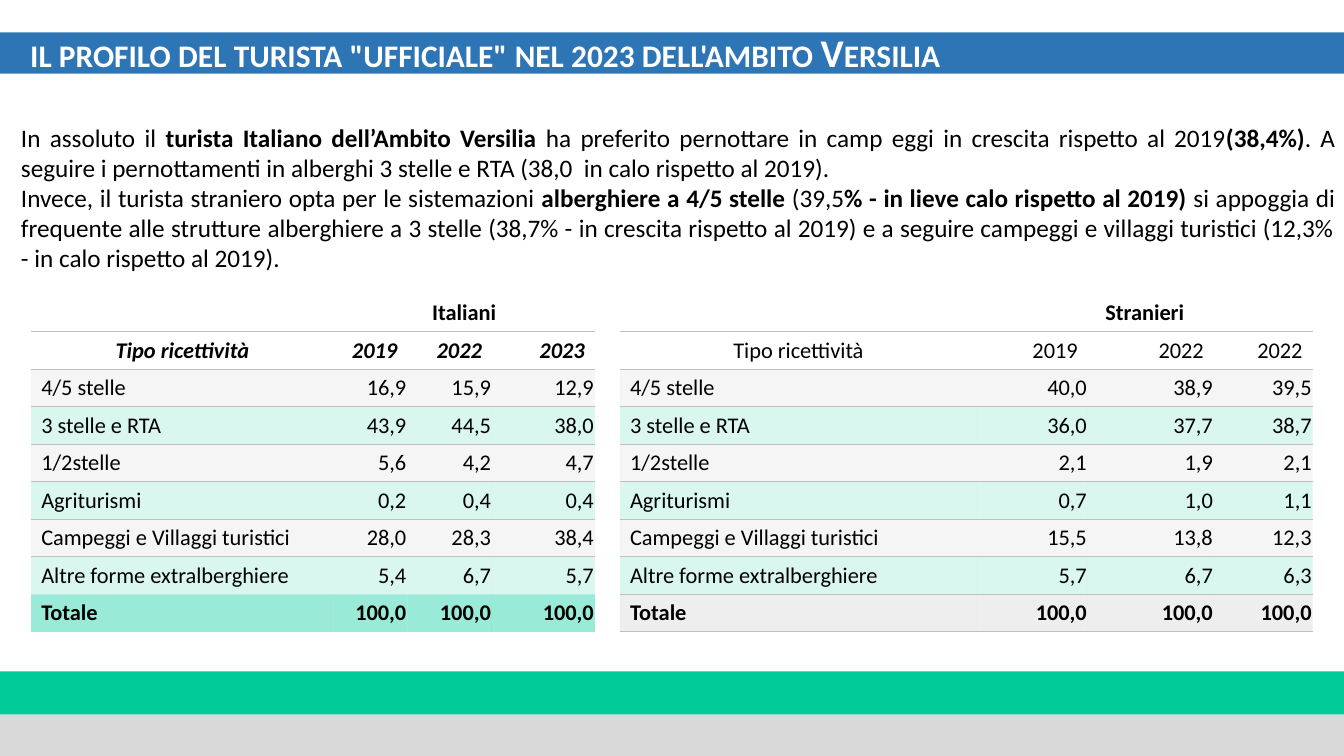
from lxml import etree
from pptx import Presentation
from pptx.dml.color import RGBColor
from pptx.enum.shapes import MSO_SHAPE
from pptx.enum.text import MSO_ANCHOR, MSO_AUTO_SIZE, PP_ALIGN
from pptx.oxml.ns import qn
from pptx.util import Inches, Pt

RECTANGLE = MSO_SHAPE.RECTANGLE
MIDDLE = MSO_ANCHOR.MIDDLE
NO_FIT = MSO_AUTO_SIZE.NONE
LEFT, CENTER, RIGHT, JUSTIFY = PP_ALIGN.LEFT, PP_ALIGN.CENTER, PP_ALIGN.RIGHT, PP_ALIGN.JUSTIFY

GREEN, GRAY, RULE_GRAY = "00CC99", "D9D9D9", "BFBFBF"


def color(hex_value):
    return RGBColor.from_string(hex_value)


def style_run(run, size, hex_value, bold=False, italic=False):
    run.font.name = "Calibri"
    run.font.size = Pt(size)
    run.font.bold = bold
    run.font.italic = italic
    run.font.color.rgb = color(hex_value)


prs = Presentation()
prs.slide_width = Inches(13.33)
prs.slide_height = Inches(7.5)
slide = prs.slides.add_slide(prs.slide_layouts[5])

for top, height, fill in [(6.66, 0.43, GREEN), (7.09, 0.41, GRAY), (0.32, 0.41, "2E75B6")]:
    band = slide.shapes.add_shape(RECTANGLE, 0, Inches(top), prs.slide_width, Inches(height))
    band.shadow.inherit = False
    band.fill.solid()
    band.fill.fore_color.rgb = color(fill)
    band.line.fill.background()

title = slide.shapes.title
title.element.getparent().append(title.element)
title.left, title.top = Inches(0.2), Inches(0.29)
title.width, title.height = Inches(10.53), Inches(0.44)
title.text_frame.text = "il profilo del turista \"ufficiale\" nel 2023 dell'ambito Versilia"
title.text_frame.auto_size = NO_FIT
title.text_frame.vertical_anchor = MIDDLE
heading = title.text_frame.paragraphs[0]
heading.alignment = LEFT
style_run(heading.runs[0], 28, "FFFFFF", bold=True)
heading.runs[0].font._element.set("cap", "small")

rows = [
    ["", "Italiani", "", "", "", "", "Stranieri", "", ""],
    ["Tipo ricettività", "2019", "2022", "2023", "", "Tipo ricettività", "2019", "2022", "2022"],
    ["4/5 stelle", "16,9", "15,9", "12,9", "", "4/5 stelle", "40,0", "38,9", "39,5"],
    ["3 stelle e RTA", "43,9", "44,5", "38,0", "", "3 stelle e RTA", "36,0", "37,7", "38,7"],
    ["1/2stelle", "5,6", "4,2", "4,7", "", "1/2stelle", "2,1", "1,9", "2,1"],
    ["Agriturismi", "0,2", "0,4", "0,4", "", "Agriturismi", "0,7", "1,0", "1,1"],
    ["Campeggi e Villaggi turistici", "28,0", "28,3", "38,4", "",
     "Campeggi e Villaggi turistici", "15,5", "13,8", "12,3"],
    ["Altre forme extralberghiere", "5,4", "6,7", "5,7", "",
     "Altre forme extralberghiere", "5,7", "6,7", "6,3"],
    ["Totale", "100,0", "100,0", "100,0", "", "Totale", "100,0", "100,0", "100,0"],
]
widths = [3, 0.73, 0.84, 1.02, 0.25, 3.54, 1.1, 1.25, 0.98]
GAP, LABELS = 4, (0, 5)
TOTAL = len(rows) - 1

overnight_stays = slide.shapes.add_table(
    len(rows), len(widths), Inches(0.31), Inches(2.92), Inches(12.71), Inches(2.9)).table
overnight_stays.first_row = False
overnight_stays.horz_banding = False
for column, width in zip(overnight_stays.columns, widths):
    column.width = Inches(width)
for first in (1, 6):
    overnight_stays.cell(0, first).merge(overnight_stays.cell(0, first + 2))

for r, row in enumerate(rows):
    overnight_stays.rows[r].height = Inches(0.32)
    for c, value in enumerate(row):
        cell = overnight_stays.cell(r, c)
        cell.vertical_anchor = MIDDLE
        italian = c < GAP
        ruled_top = c != GAP and r > 0 and not (italian and r == TOTAL)
        ruled_bottom = c != GAP and not (italian and r >= TOTAL - 1)

        properties = cell._tc.get_or_add_tcPr()
        for side, ruled in [("L", False), ("R", False), ("T", ruled_top), ("B", ruled_bottom)]:
            border = etree.SubElement(properties, qn(f"a:ln{side}"), w=str(Pt(0.96)))
            if ruled:
                paint = etree.SubElement(border, qn("a:solidFill"))
                etree.SubElement(paint, qn("a:srgbClr"), val=RULE_GRAY)
            else:
                etree.SubElement(border, qn("a:noFill"))

        if c == GAP or r < 2:
            cell.fill.background()
        else:
            if r == TOTAL:
                fill, opacity = (GREEN, 40) if italian else (RULE_GRAY, 25)
            else:
                fill, opacity = (GRAY, 25) if r % 2 == 0 else (GREEN, 15)
            cell.fill.solid()
            cell.fill.fore_color.rgb = color(fill)
            tint = properties.find(qn("a:solidFill")).find(qn("a:srgbClr"))
            etree.SubElement(tint, qn("a:alpha"), val=str(opacity * 1000))

        paragraph = cell.text_frame.paragraphs[0]
        if not value:
            etree.SubElement(paragraph._p, qn("a:endParaRPr"), sz="1600")
            continue
        paragraph.text = value
        if r == 0 or (r == 1 and c in LABELS):
            paragraph.alignment = CENTER
        else:
            paragraph.alignment = LEFT if c in LABELS else RIGHT
        if r > 1 and c not in LABELS:
            cell.margin_left = cell.margin_right = Inches(0.01)
        style_run(paragraph.runs[0], 16, "000000",
                  bold=r in (0, TOTAL) or (r == 1 and italian), italic=r == 1 and italian)

commentary = [
    [("In assoluto il ", False),
     ("turista Italiano dell’Ambito Versilia ", True),
     ("ha preferito pernottare in camp eggi in crescita rispetto al 2019", False),
     ("(38,4%)", True),
     (". A seguire i pernottamenti in alberghi 3 stelle e RTA (38,0  in calo rispetto al 2019).", False)],
    [("Invece, il turista straniero opta per le sistemazioni ", False),
     ("alberghiere a 4/5 stelle", True),
     (" (39,5", False),
     ("% - in lieve calo rispetto al 2019)", True),
     (" si appoggia di frequente alle strutture alberghiere a 3 stelle (38,7% - in crescita rispetto "
      "al 2019) e a seguire campeggi e villaggi turistici (12,3% - in calo rispetto al 2019).", False)],
]
comment_frame = slide.shapes.add_textbox(
    Inches(0.11), Inches(1.16), Inches(13.23), Inches(1.6)).text_frame
comment_frame.word_wrap = True
for i, pieces in enumerate(commentary):
    paragraph = comment_frame.add_paragraph() if i else comment_frame.paragraphs[0]
    paragraph.alignment = JUSTIFY
    for words, bold in pieces:
        run = paragraph.add_run()
        run.text = words
        style_run(run, 18, "000000", bold=bold)

prs.save("out.pptx")
